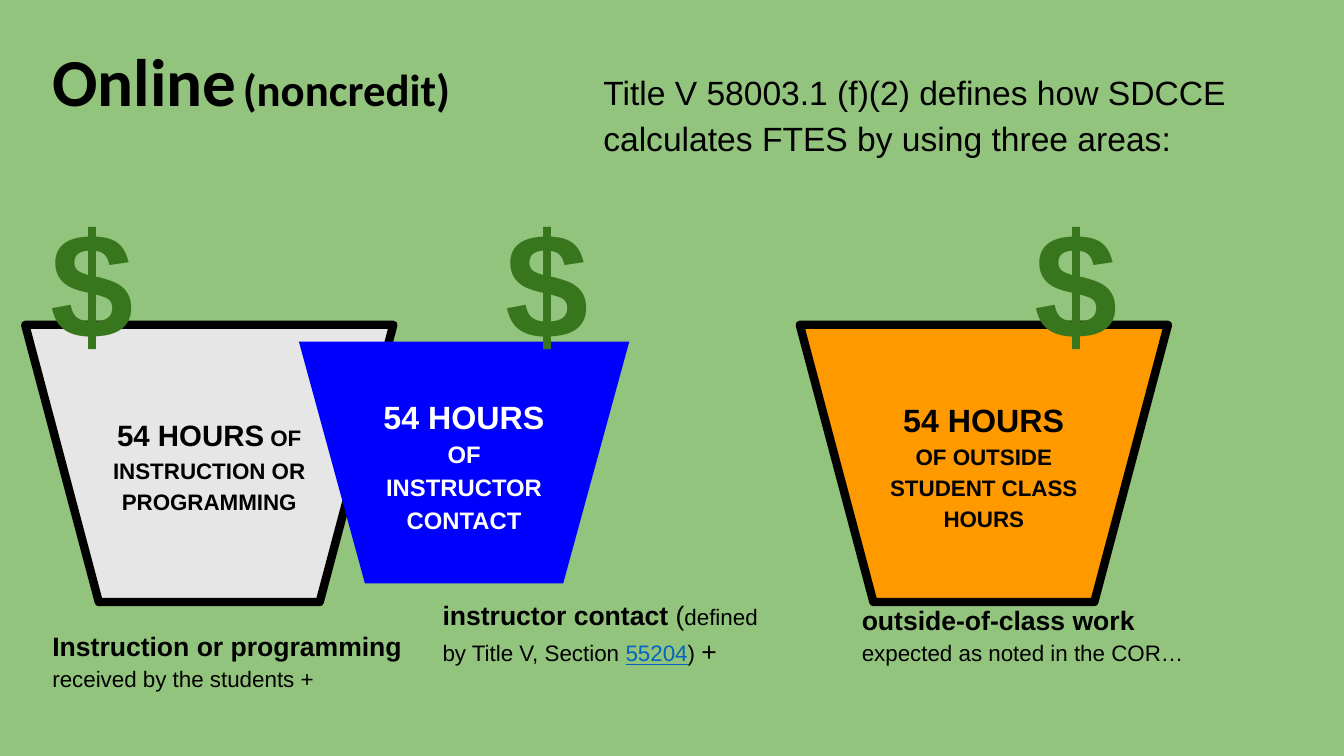
from pptx import Presentation
from pptx.dml.color import RGBColor
from pptx.enum.shapes import MSO_SHAPE
from pptx.enum.text import MSO_ANCHOR, PP_ALIGN
from pptx.util import Pt

GREEN = RGBColor(0x93, 0xC4, 0x7D)
DARK_GREEN = RGBColor(0x38, 0x76, 0x1D)
GREY = RGBColor(0xE7, 0xE6, 0xE6)
BLUE = RGBColor(0, 0, 0xFF)
ORANGE = RGBColor(0xFF, 0x99, 0)
LINK = RGBColor(0x05, 0x63, 0xC1)
BLACK = RGBColor(0, 0, 0)
WHITE = RGBColor(0xFF, 0xFF, 0xFF)
INSET = 9.4

# Runs are (text, size, bold); boxes are (left, top, width, height) in points.
TITLE_BOX = (28, 37.5, 448, 57.5)
TITLE = [("Online", 48, True), (" ", 19, True), ("(noncredit)", 32, True)]

INTRO_BOX = (421.5, 37.5, 499.5, 149)
INTRO = [("Title V 58003.1 (f)(2) defines how SDCCE calculates FTES by using three areas:", 24, False)]

# Box, fill, outlined, text colour, runs
BUCKETS = [
    ((18, 232, 263, 198), GREY, True, BLACK,
     [("54 HOURS", 21, True), (" OF INSTRUCTION OR PROGRAMMING", 16, True)]),
    ((213.5, 244, 236, 172.8), BLUE, False, WHITE,
     [("54 HOURS", 23, True), (" OF INSTRUCTOR CONTACT", 17, True)]),
    ((571.3, 232, 263, 198), ORANGE, True, BLACK,
     [("54 HOURS", 23, True), (" OF OUTSIDE STUDENT CLASS HOURS", 16, True)]),
]

DOLLAR_LEFTS = [0, 324.7, 702.7]
DOLLAR_TOP, DOLLAR_WIDTH, DOLLAR_HEIGHT = 125.3, 131.8, 104.4

CAPTIONS = [
    ((28, 437, 314.6, 98.6),
     [("Instruction or programming ", 19, True), ("received by the students +", 16, False)]),
    ((306.7, 414.7, 262.8, 108.7),
     [("instructor contact", 19, True), (" (", 19, False),
      ("defined by Title V, Section ", 16, False), ("55204", 16, False),
      (") ", 16, False), ("+", 19, False)]),
    ((606.2, 418.3, 271.4, 115),
     [("outside-of-class work ", 19, True), ("expected as noted in the COR…", 16, False)]),
]
LINK_TEXT = "55204"


def write_runs(shape, runs, color=BLACK, font="Arial", align=PP_ALIGN.LEFT,
               anchor=MSO_ANCHOR.TOP, spacing=1.15):
    frame = shape.text_frame
    frame.word_wrap = True
    frame.vertical_anchor = anchor
    frame.margin_left = frame.margin_right = Pt(INSET)
    frame.margin_top = frame.margin_bottom = Pt(INSET)
    paragraph = frame.paragraphs[0]
    paragraph.alignment = align
    paragraph.line_spacing = spacing
    for text, size, bold in runs:
        run = paragraph.add_run()
        run.text = text
        run.font.name = font
        run.font.size = Pt(size)
        run.font.bold = bold
        run.font.underline = text == LINK_TEXT
        run.font.color.rgb = LINK if text == LINK_TEXT else color


def add_text(slide, box, runs, **style):
    write_runs(slide.shapes.add_textbox(*map(Pt, box)), runs, **style)


def add_bucket(slide, box, fill, outlined, color, runs):
    bucket = slide.shapes.add_shape(MSO_SHAPE.FLOWCHART_MANUAL_OPERATION, *map(Pt, box))
    bucket.shadow.inherit = False
    bucket.fill.solid()
    bucket.fill.fore_color.rgb = fill
    if outlined:
        bucket.line.color.rgb = BLACK
        bucket.line.width = Pt(6)
    else:
        bucket.line.fill.background()
    write_runs(bucket, runs, color, align=PP_ALIGN.CENTER, anchor=MSO_ANCHOR.MIDDLE)


def main():
    presentation = Presentation()
    presentation.slide_width, presentation.slide_height = Pt(960), Pt(540)
    slide = presentation.slides.add_slide(presentation.slide_layouts[6])
    slide.background.fill.solid()
    slide.background.fill.fore_color.rgb = GREEN

    add_text(slide, TITLE_BOX, TITLE, font="Calibri", anchor=MSO_ANCHOR.BOTTOM, spacing=1.0)
    for bucket in BUCKETS:
        add_bucket(slide, *bucket)
    for left in DOLLAR_LEFTS:
        add_text(slide, (left, DOLLAR_TOP, DOLLAR_WIDTH, DOLLAR_HEIGHT), [("$", 107, True)],
                 color=DARK_GREEN, align=PP_ALIGN.CENTER, spacing=1.0)
    for box, runs in CAPTIONS:
        add_text(slide, box, runs)
    add_text(slide, INTRO_BOX, INTRO)
    presentation.save("out.pptx")


if __name__ == "__main__":
    main()
